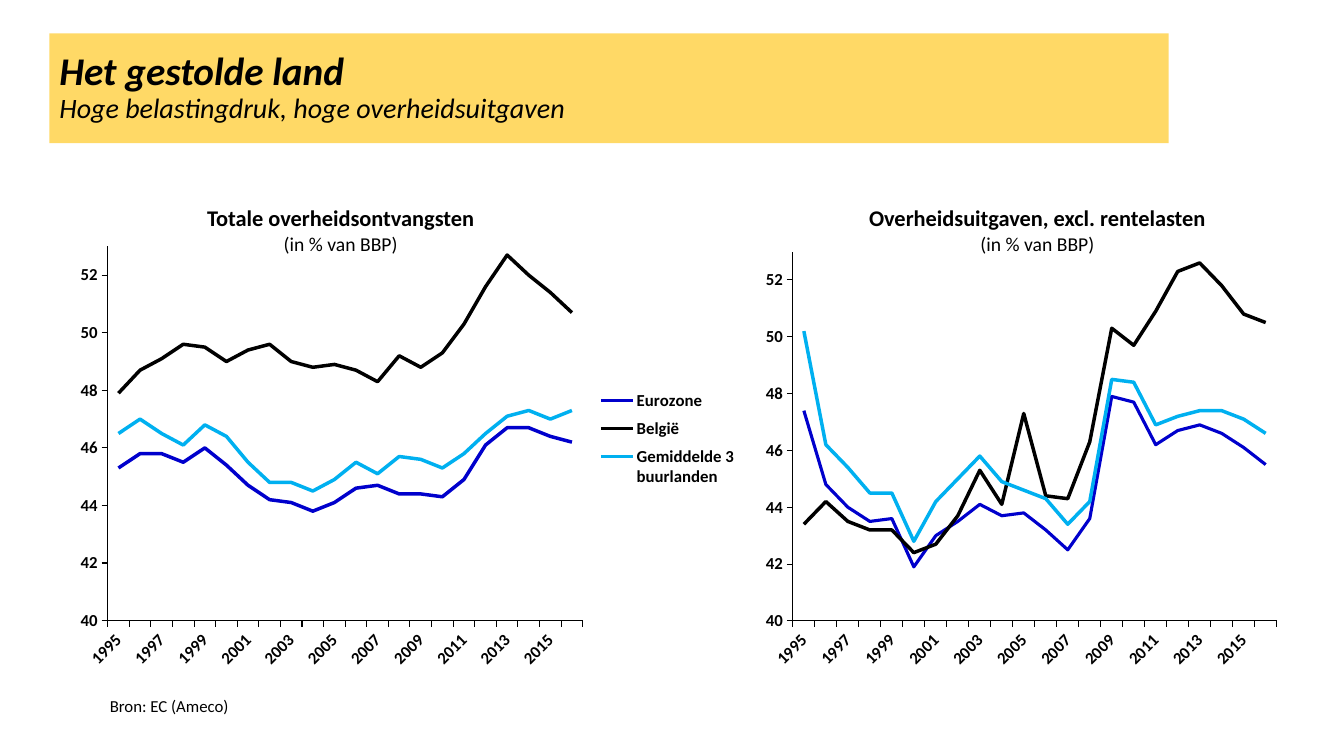
from dataclasses import dataclass
from lxml.etree import SubElement
from pptx import Presentation
from pptx.chart.chart import Chart
from pptx.chart.data import CategoryChartData
from pptx.dml.color import RGBColor
from pptx.enum.chart import XL_CHART_TYPE, XL_LEGEND_POSITION, XL_TICK_MARK
from pptx.enum.shapes import MSO_SHAPE
from pptx.enum.text import MSO_ANCHOR, MSO_AUTO_SIZE, PP_ALIGN
from pptx.oxml.ns import qn
from pptx.slide import Slide
from pptx.text.text import Font, TextFrame
from pptx.util import Inches, Pt

FACE = "Calibri"
BLACK = "000000"
YEARS = [str(year) for year in range(1995, 2017)]


@dataclass
class Box:
    left: float
    top: float
    width: float
    height: float

    def place(self) -> tuple:
        return tuple(Inches(n) for n in (self.left, self.top, self.width, self.height))


@dataclass
class Line:
    name: str
    color: str
    weight: float
    points: list[float]


@dataclass
class Graph:
    frame: Box
    plot: Box
    lines: list[Line]
    legend: Box | None = None


@dataclass
class Head:
    box: Box
    title: str


GRAPHS = [
    Graph(Box(0.17, 2.09, 11.22, 4.86), Box(0.08, 0.073, 0.42, 0.764), [
        Line("Eurozone", "0000CC", 2.5,
             [45.3, 45.8, 45.8, 45.5, 46, 45.4, 44.7, 44.2, 44.1, 43.8, 44.1,
              44.6, 44.7, 44.4, 44.4, 44.3, 44.9, 46.1, 46.7, 46.7, 46.4, 46.2]),
        Line("België", BLACK, 2.5,
             [47.9, 48.7, 49.1, 49.6, 49.5, 49, 49.4, 49.6, 49, 48.8, 48.9,
              48.7, 48.3, 49.2, 48.8, 49.3, 50.3, 51.6, 52.7, 52, 51.4, 50.7]),
        Line("Gemiddelde 3 buurlanden", "00B0F0", 2.5,
             [46.5, 47, 46.5, 46.1, 46.8, 46.4, 45.5, 44.8, 44.8, 44.5, 44.9,
              45.5, 45.1, 45.7, 45.6, 45.3, 45.8, 46.5, 47.1, 47.3, 47, 47.3]),
    ], Box(0.51, 0.35, 0.13, 0.23)),
    Graph(Box(7.33, 1.95, 5.62, 4.79), Box(0.095, 0.114, 0.854, 0.765), [
        Line("Eurozone", "0000CC", 2.25,
             [47.4, 44.8, 44, 43.5, 43.6, 41.9, 43, 43.5, 44.1, 43.7, 43.8,
              43.2, 42.5, 43.6, 47.9, 47.7, 46.2, 46.7, 46.9, 46.6, 46.1, 45.5]),
        Line("België", BLACK, 2.5,
             [43.4, 44.2, 43.5, 43.2, 43.2, 42.4, 42.7, 43.7, 45.3, 44.1, 47.3,
              44.4, 44.3, 46.3, 50.3, 49.7, 50.9, 52.3, 52.6, 51.8, 50.8, 50.5]),
        Line("Gemiddelde 3 buurlanden", "00B0F0", 2.5,
             [50.2, 46.2, 45.4, 44.5, 44.5, 42.8, 44.2, 45, 45.8, 44.9, 44.6,
              44.3, 43.4, 44.2, 48.5, 48.4, 46.9, 47.2, 47.4, 47.4, 47.1, 46.6]),
    ]),
]
HEADS = [
    Head(Box(0.98, 1.98, 4.8, 0.61), "Totale overheidsontvangsten"),
    Head(Box(7.89, 1.98, 4.8, 0.61), "Overheidsuitgaven, excl. rentelasten"),
]


def paint(color: str) -> RGBColor:
    return RGBColor.from_string(color)


def style(font: Font, size: float, bold: bool = False, slant: bool = False) -> None:
    font.name = FACE
    font.size = Pt(size)
    font.bold = bold
    font.italic = slant
    font.color.rgb = paint(BLACK)


def lay_out(chart: Chart, parent: str, box: Box, inner: bool = False) -> None:
    node = chart.element.xpath(f".//c:{parent}")[0]
    for old in node.findall(qn("c:layout")):
        node.remove(old)
    layout = SubElement(node, qn("c:layout"))
    node.insert(0 if inner else 1, layout)
    manual = SubElement(layout, qn("c:manualLayout"))
    marks = {"layoutTarget": "inner"} if inner else {}
    marks |= {"xMode": "edge", "yMode": "edge", "x": box.left, "y": box.top,
              "w": box.width, "h": box.height}
    for tag, value in marks.items():
        SubElement(manual, qn(f"c:{tag}")).set("val", str(value))


def tilt_years(chart: Chart) -> None:
    axis = chart.element.xpath(".//c:catAx")[0]
    axis.find(qn("c:txPr")).find(qn("a:bodyPr")).set("rot", "-2700000")
    last = axis.find(qn("c:noMultiLvlLbl"))
    for tag, step in (("tickLblSkip", 2), ("tickMarkSkip", 1)):
        skip = SubElement(axis, qn(f"c:{tag}"))
        skip.set("val", str(step))
        last.addprevious(skip)


def draw_graph(slide: Slide, graph: Graph) -> None:
    data = CategoryChartData(number_format="0.0")
    data.categories = YEARS
    for line in graph.lines:
        data.add_series(line.name, line.points)
    chart = slide.shapes.add_chart(XL_CHART_TYPE.LINE, *graph.frame.place(), data).chart
    style(chart.font, 10)
    chart.has_title = False
    chart.plots[0].vary_by_categories = False
    for line, series in zip(graph.lines, chart.plots[0].series):
        series.smooth = False
        series.format.line.width = Pt(line.weight)
        series.format.line.color.rgb = paint(line.color)
    for axis in (chart.category_axis, chart.value_axis):
        axis.has_major_gridlines = False
        axis.major_tick_mark = XL_TICK_MARK.OUTSIDE
        axis.format.line.width = Pt(0.75)
        axis.format.line.color.rgb = paint(BLACK)
        style(axis.tick_labels.font, 12, True)
    scale = chart.value_axis
    scale.minimum_scale, scale.maximum_scale, scale.major_unit = 40, 53, 2
    scale.tick_labels.number_format = "0"
    scale.tick_labels.number_format_is_linked = False
    tilt_years(chart)
    lay_out(chart, "plotArea", graph.plot, True)
    chart.has_legend = graph.legend is not None
    if graph.legend:
        chart.legend.position = XL_LEGEND_POSITION.BOTTOM
        chart.legend.include_in_layout = False
        style(chart.legend.font, 12, True)
        lay_out(chart, "legend", graph.legend)


def add_text(slide: Slide, box: Box) -> TextFrame:
    frame = slide.shapes.add_textbox(*box.place()).text_frame
    frame.word_wrap = True
    frame.auto_size = MSO_AUTO_SIZE.SHAPE_TO_FIT_TEXT
    return frame


def draw_head(slide: Slide, head: Head) -> None:
    para = add_text(slide, head.box).paragraphs[0]
    para.alignment = PP_ALIGN.CENTER
    para.font.name = FACE
    para.font.color.rgb = paint(BLACK)
    top = para.add_run()
    top.text = head.title
    para.add_line_break()
    unit = para.add_run()
    unit.text = "(in % van BBP)"
    for run, size, bold in ((top, 16, True), (unit, 14, False)):
        run.font.size = Pt(size)
        run.font.bold = bold


def draw_banner(slide: Slide) -> None:
    banner = slide.shapes.add_shape(MSO_SHAPE.RECTANGLE, *Box(0.49, 0.33, 11.1, 1.09).place())
    banner.shadow.inherit = False
    banner.fill.solid()
    banner.fill.fore_color.rgb = paint("FFD966")
    banner.line.fill.background()
    frame = banner.text_frame
    frame.word_wrap = True
    frame.vertical_anchor = MSO_ANCHOR.MIDDLE
    frame.text = "Het gestolde land\nHoge belastingdruk, hoge overheidsuitgaven"
    for para, size, bold in zip(frame.paragraphs, (28, 20), (True, False)):
        para.alignment = PP_ALIGN.LEFT
        para.line_spacing = 0.9
        style(para.font, size, bold, True)


def main() -> None:
    deck = Presentation()
    deck.slide_width, deck.slide_height = Inches(13.33), Inches(7.5)
    slide = deck.slides.add_slide(deck.slide_layouts[6])
    for graph in GRAPHS:
        draw_graph(slide, graph)
    for head in HEADS:
        draw_head(slide, head)
    draw_banner(slide)
    source = add_text(slide, Box(0.99, 6.85, 1.61, 0.3))
    source.text = "Bron: EC (Ameco)"
    style(source.paragraphs[0].font, 12)
    deck.save("out.pptx")


if __name__ == "__main__":
    main()
